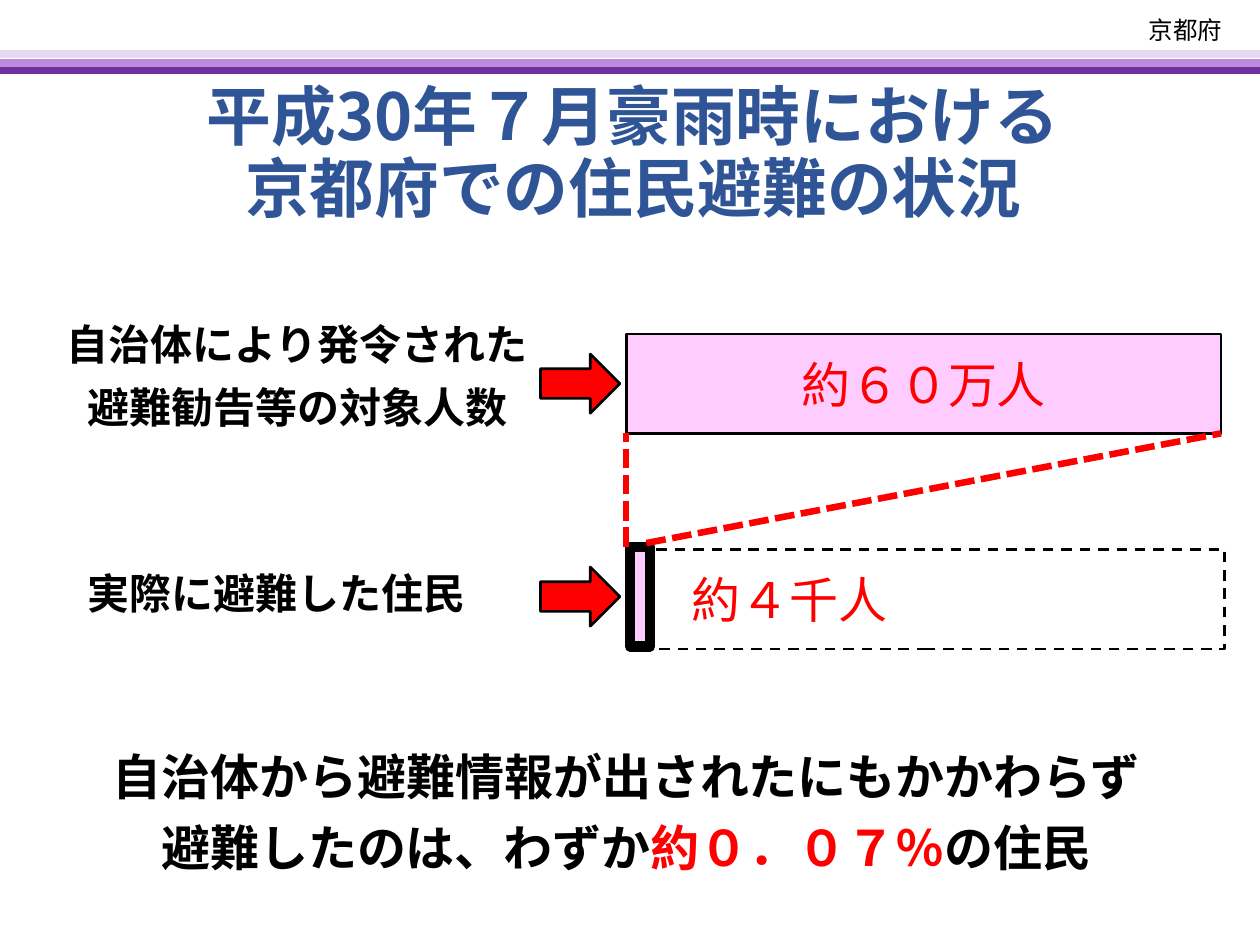
from lxml import etree
from pptx import Presentation
from pptx.dml.color import RGBColor
from pptx.enum.dml import MSO_LINE
from pptx.enum.shapes import MSO_CONNECTOR, MSO_SHAPE
from pptx.enum.text import MSO_ANCHOR, PP_ALIGN
from pptx.oxml.ns import qn
from pptx.util import Inches, Pt

BLACK = RGBColor(0x00, 0x00, 0x00)
RED = RGBColor(0xFF, 0x00, 0x00)
PINK = RGBColor(0xFF, 0xCC, 0xFF)
TITLE_BLUE = RGBColor(0x2F, 0x55, 0x97)
DEEP_PURPLE = RGBColor(0x70, 0x30, 0xA0)
MID_PURPLE = RGBColor(0xBA, 0x8B, 0xDD)
PALE_PURPLE = RGBColor(0xE8, 0xD9, 0xF3)

LEFT, CENTER, RIGHT = PP_ALIGN.LEFT, PP_ALIGN.CENTER, PP_ALIGN.RIGHT
MIDDLE = MSO_ANCHOR.MIDDLE
RECTANGLE, RIGHT_ARROW = MSO_SHAPE.RECTANGLE, MSO_SHAPE.RIGHT_ARROW
STRAIGHT = MSO_CONNECTOR.STRAIGHT
DASH, SHORT_DASH = MSO_LINE.DASH, MSO_LINE.SQUARE_DOT
CJK_FONT = "Noto Sans CJK JP"

deck = Presentation()
deck.slide_width, deck.slide_height = Inches(10), Inches(7.5)
page = deck.slides.add_slide(deck.slide_layouts[6])


def write(box, lines, size, color, align=CENTER, font=CJK_FONT, bold=False, spacing=1.0):
    """Fill a shape with paragraphs; each line is a list of (text, colour or None)."""
    frame = box.text_frame
    frame.vertical_anchor = MIDDLE
    for index, spans in enumerate(lines):
        para = frame.paragraphs[0] if index == 0 else frame.add_paragraph()
        para.alignment = align
        para.line_spacing = spacing
        if index:
            para.space_before = Pt(10)
        para.font.size, para.font.bold, para.font.name = Pt(size), bold, font
        para.font.color.rgb = color
        defaults = para._p.pPr.find(qn("a:defRPr"))
        etree.SubElement(defaults, qn("a:ea")).set("typeface", CJK_FONT)
        for text, accent in spans:
            span = para.add_run()
            span.text = text
            if accent is not None:
                span.font.color.rgb = accent


def add_line(start, end, color, width):
    line = page.shapes.add_connector(STRAIGHT, *map(Inches, start + end))
    line.line.color.rgb, line.line.width = color, Pt(width)
    etree.SubElement(line._element.spPr, qn("a:effectLst"))
    return line


# Header band
region = page.shapes.add_textbox(Inches(8.5), Inches(0.06), Inches(1.3), Inches(0.36))
region.text_frame.word_wrap = False
write(region, [[("京都府", None)]], 14, BLACK, RIGHT, "Arial")
for y, color in ((0.56, DEEP_PURPLE), (0.5, MID_PURPLE), (0.43, PALE_PURPLE)):
    add_line((0, y), (10, y), color, 4.5)

# Title, row labels and conclusion
texts = [
    ((0.3, 0.68, 9.45, 1.18), 37, TITLE_BLUE, CENTER, 0.7,
     [[("平成30年７月豪雨時における", None)], [("京都府での住民避難の状況", None)]]),
    ((0.43, 2.41, 3.86, 1.18), 24, BLACK, CENTER, 0.9,
     [[("自治体により発令された", None)], [("避難勧告等の対象人数", None)]]),
    ((0.6, 4.14, 3.7, 1.18), 24, BLACK, LEFT, 0.9, [[("実際に避難した住民", None)]]),
    ((0.72, 5.8, 8.5, 1.34), 28, BLACK, CENTER, 0.9,
     [[("自治体から避難情報が出されたにもかかわらず", None)],
      [("避難したのは、わずか", None), ("約０．０７％", RED), ("の住民", None)]]),
]
for place, size, color, align, spacing, lines in texts:
    box = page.shapes.add_textbox(*map(Inches, place))
    box.text_frame.word_wrap = True
    write(box, lines, size, color, align, bold=True, spacing=spacing)

# Bars and arrows
shapes = [
    (RECTANGLE, (4.97, 2.65, 4.72, 0.79), PINK, 1.5),
    (RIGHT_ARROW, (4.29, 2.81, 0.63, 0.47), RED, 1.5),
    (RIGHT_ARROW, (4.29, 4.5, 0.63, 0.47), RED, 1.5),
    (RECTANGLE, (5, 4.34, 0.16, 0.79), PINK, 6),
    (RECTANGLE, (5, 4.36, 4.72, 0.79), None, 1.5),
]
drawn = []
for kind, place, fill, width in shapes:
    shape = page.shapes.add_shape(kind, *map(Inches, place))
    shape.shadow.inherit = False
    if fill is None:
        shape.fill.background()
    else:
        shape.fill.solid()
        shape.fill.fore_color.rgb = fill
    shape.line.color.rgb, shape.line.width = BLACK, Pt(width)
    drawn.append(shape)

target_bar, outline_bar = drawn[0], drawn[-1]
write(target_bar, [[("約６０万人", None)]], 28, RED, font="Calibri")
outline_bar.line.dash_style = DASH
outline_bar.text_frame.margin_left = Inches(0.49)
write(outline_bar, [[("約４千人", None)]], 28, RED, LEFT, "Calibri")

# Zoom lines from the target bar to the evacuee bar
for start, end in (((4.97, 4.34), (4.97, 3.44)), ((5.13, 4.31), (9.69, 3.44))):
    add_line(start, end, RED, 3.75).line.dash_style = SHORT_DASH

deck.save("out.pptx")
